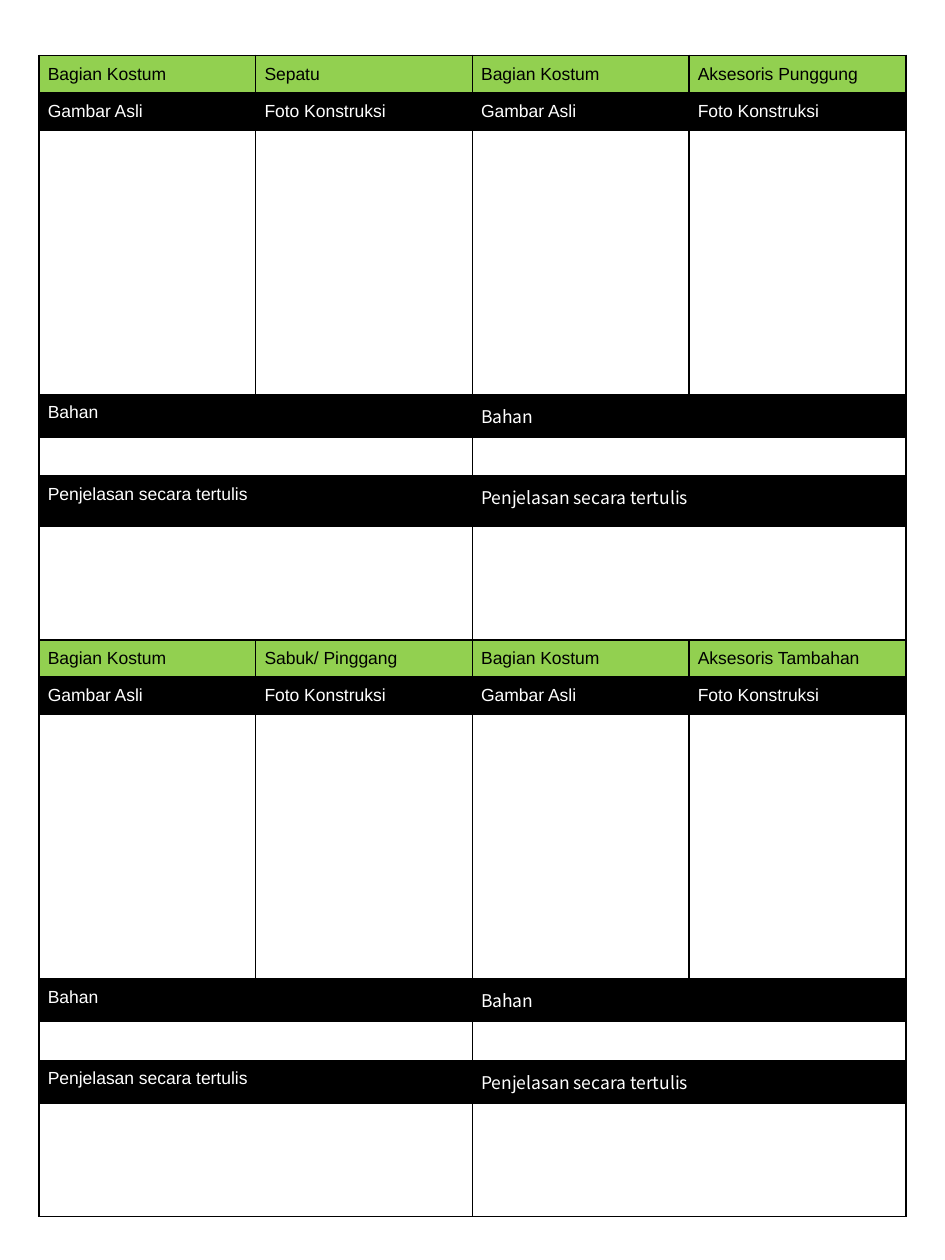
import dataclasses

import lxml.etree
import pptx
import pptx.dml.color
import pptx.oxml.ns
import pptx.util

Inches = pptx.util.Inches
qn = pptx.oxml.ns.qn


@dataclasses.dataclass(frozen=True)
class Theme:
    green: str = "92D050"
    black: str = "000000"
    white: str = "FFFFFF"
    font: str = "Arial"
    alternate_font: str = "Noto Sans CJK KR"
    text_size: float = 10
    border_width: float = 1
    cell_margin: float = 0.07


class CostumeSheet:
    def __init__(self, presentation, theme):
        self.theme = theme
        self.slide = presentation.slides.add_slide(presentation.slide_layouts[6])

    def add_table(self, left, top, column_widths, row_heights):
        frame = self.slide.shapes.add_table(
            len(row_heights), len(column_widths), Inches(left), Inches(top),
            Inches(sum(column_widths)), Inches(sum(row_heights)))
        table = frame.table
        table.first_row = table.horz_banding = False
        for column, width in zip(table.columns, column_widths):
            column.width = Inches(width)
        for row, height in zip(table.rows, row_heights):
            row.height = Inches(height)
        for cell in table.iter_cells():
            self.style_cell(cell)
        return table

    def style_cell(self, cell):
        margin = Inches(self.theme.cell_margin)
        cell.margin_left = cell.margin_right = margin
        cell.margin_top = cell.margin_bottom = margin
        # Borders come before the fill in the cell properties
        properties = cell._tc.get_or_add_tcPr()
        for side in ("a:lnL", "a:lnR", "a:lnT", "a:lnB"):
            line = lxml.etree.SubElement(
                properties, qn(side), w=str(pptx.util.Pt(self.theme.border_width)))
            solid = lxml.etree.SubElement(line, qn("a:solidFill"))
            lxml.etree.SubElement(solid, qn("a:srgbClr"), val=self.theme.black)
        cell.fill.background()
        # Keeps empty rows from growing to the default text size
        lxml.etree.SubElement(
            cell.text_frame.paragraphs[0]._p, qn("a:endParaRPr"),
            sz=str(int(self.theme.text_size * 100)))

    def write_cell(self, cell, text, fill, color, font):
        cell.fill.solid()
        cell.fill.fore_color.rgb = pptx.dml.color.RGBColor.from_string(fill)
        run = cell.text_frame.paragraphs[0].add_run()
        run.text = text
        run.font.name = font
        run.font.size = pptx.util.Pt(self.theme.text_size)
        run.font.color.rgb = pptx.dml.color.RGBColor.from_string(color)

    def write_section(self, table, first_row, parts):
        theme = self.theme
        for half, part in enumerate(parts):
            column = 2 * half
            # Part name and picture headings
            for offset, text in enumerate(("Bagian Kostum", part)):
                self.write_cell(table.cell(first_row, column + offset), text,
                                theme.green, theme.black, theme.font)
            for offset, text in enumerate(("Gambar Asli", "Foto Konstruksi")):
                self.write_cell(table.cell(first_row + 1, column + offset), text,
                                theme.black, theme.white, theme.font)
            # Material and explanation, each two columns wide
            for row in range(first_row + 3, first_row + 7):
                table.cell(row, column).merge(table.cell(row, column + 1))
            font = (theme.font, theme.alternate_font)[half]
            for offset, text in ((3, "Bahan"), (5, "Penjelasan secara tertulis")):
                self.write_cell(table.cell(first_row + offset, column), text,
                                theme.black, theme.white, font)


def main():
    presentation = pptx.Presentation()
    presentation.slide_width = Inches(7.5)
    presentation.slide_height = Inches(10)
    sheet = CostumeSheet(presentation, Theme())

    # Two sections of seven rows; only the explanation heading differs in height
    row_heights = []
    for explanation_height in (0.4, 0.34):
        row_heights += [0.29, 0.29, 2.1, 0.33, 0.29, explanation_height, 0.9]
    table = sheet.add_table(0.31, 0.44, [1.72] * 4, row_heights)

    # Costume parts
    sections = (("Sepatu", "Aksesoris Punggung"),
                ("Sabuk/ Pinggang", "Aksesoris Tambahan"))
    for index, parts in enumerate(sections):
        sheet.write_section(table, 7 * index, parts)

    presentation.save("out.pptx")


if __name__ == "__main__":
    main()
